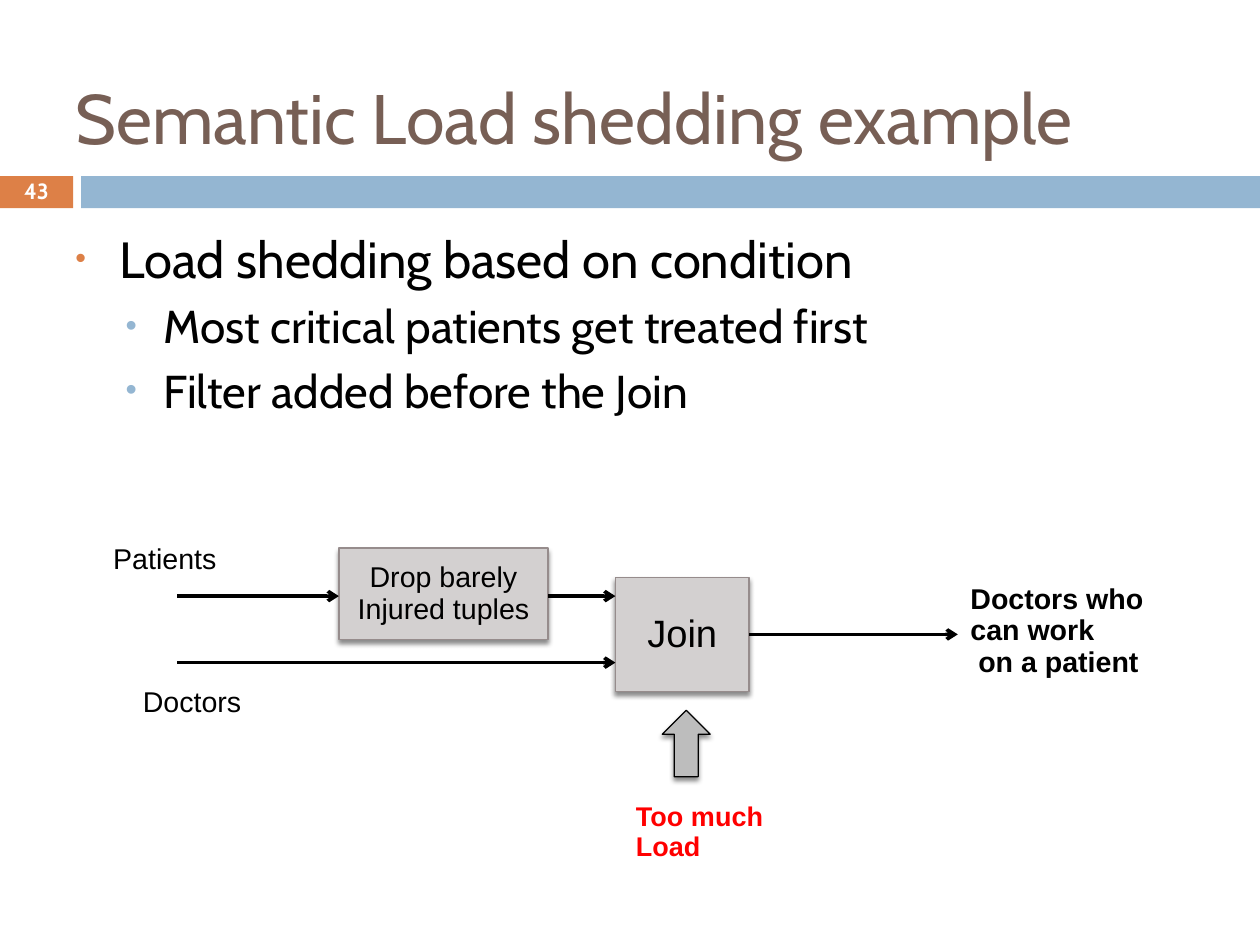
from lxml import etree
from pptx import Presentation
from pptx import util as u
from pptx.dml.color import RGBColor
from pptx.enum import shapes, text
from pptx.oxml.ns import qn

PAGE_WIDTH, PAGE_HEIGHT = 793.75, 595.25
BLACK, WHITE, ORANGE, BLUE = "000000", "FFFFFF", "DD8047", "94B6D2"
BROWN, RED, GREY, EDGE, ARROW_GREY = "775F55", "FF0000", "D3D0D0", "968C8C", "BDBDBD"
LEFT, CENTER = text.PP_ALIGN.LEFT, text.PP_ALIGN.CENTER
TOP, MIDDLE = text.MSO_ANCHOR.TOP, text.MSO_ANCHOR.MIDDLE


def color(value):
    return RGBColor.from_string(value)


def child(parent, tag, **attributes):
    return etree.SubElement(parent, qn(tag), attributes)


def write(shape, lines, size, font="Arial", fill=BLACK, bold=False, align=LEFT,
          anchor=TOP, wrap=True, spacing=0.93, margins=(7.92, 4.32)):
    frame = shape.text_frame
    frame.word_wrap = wrap
    frame.vertical_anchor = anchor
    frame.margin_left = frame.margin_right = u.Pt(margins[0])
    frame.margin_top = frame.margin_bottom = u.Pt(margins[1])
    for index, line in enumerate(lines):
        para = frame.paragraphs[0] if index == 0 else frame.add_paragraph()
        para.alignment = align
        para.line_spacing = spacing
        span = para.add_run()
        span.text = line
        span.font.size = u.Pt(size)
        span.font.name = font
        span.font.bold = bold
        span.font.color.rgb = color(fill)
    return frame.paragraphs


def add_text(page, box, lines, size, **style):
    return write(page.shapes.add_textbox(*map(u.Pt, box)), lines, size, **style)


def add_block(page, kind, box, fill, edge=None, shadow=False):
    block = page.shapes.add_shape(kind, *map(u.Pt, box))
    block.shadow.inherit = False
    block.fill.solid()
    block.fill.fore_color.rgb = color(fill)
    if edge:
        block.line.color.rgb = color(edge)
        block.line.width = u.Pt(0.79)
    else:
        block.line.fill.background()
    if shadow:
        effects = block.element.spPr.find(qn("a:effectLst"))
        outer = child(effects, "a:outerShdw", blurRad=str(u.Pt(3)), dist=str(u.Pt(2.4)),
                      dir="5400000", rotWithShape="0")
        child(child(outer, "a:srgbClr", val=BLACK), "a:alpha", val="45000")
    return block


def add_arrow(page, start, end, y):
    arrow = page.shapes.add_connector(
        shapes.MSO_CONNECTOR.STRAIGHT, *map(u.Pt, (start, y, end, y)))
    arrow.line.color.rgb = color(BLACK)
    arrow.line.width = u.Pt(2.25)
    properties = arrow.element.spPr
    child(properties.find(qn("a:ln")), "a:tailEnd", type="arrow")
    child(properties, "a:effectLst")


def add_bullet(para, level, before, left, hanging, fill, percent):
    para.level = level
    para.space_before = u.Pt(before)
    props = para._p.get_or_add_pPr()
    props.set("marL", str(u.Pt(left)))
    props.set("indent", str(u.Pt(-hanging)))
    child(child(props, "a:buClr"), "a:srgbClr", val=fill)
    child(props, "a:buSzPct", val=str(percent * 1000))
    child(props, "a:buFont", typeface="Arial")
    child(props, "a:buChar", char="•")


def draw_header(page, box):
    left, top, width, height = box
    band_height, number_width, gap = 20.2, 46.1, 5
    band_top = top + height - band_height
    band_left = left + number_width + gap
    rectangle = shapes.MSO_SHAPE.RECTANGLE
    add_block(page, rectangle, (left, band_top, number_width, band_height), ORANGE)
    add_block(page, rectangle, (band_left, band_top, left + width - band_left, band_height), BLUE)
    add_text(page, (left + 39.6, top + 23.8, 714.2, 99.4), ["Semantic Load shedding example"],
             44.1, font="Cabin", fill=BROWN, anchor=MIDDLE, spacing=1.0)
    add_text(page, (left, band_top - 1.2, number_width, band_height), ["43"], 13.9,
             font="Cabin", fill=WHITE, bold=True, align=CENTER, anchor=MIDDLE, spacing=1.0)


def draw_bullets(page, box):
    lines = ["Load shedding based on condition", "Most critical patients get treated first",
             "Filter added before the Join"]
    first, *rest = add_text(page, box, lines, 29, font="Cabin", spacing=1.0)
    first.runs[0].font.size = u.Pt(32)
    add_bullet(first, 0, 7.7, 27.8, 27.8, ORANGE, 60)
    for para in rest:
        add_bullet(para, 1, 5.8, 55.4, 23.8, BLUE, 70)


def draw_join_flow(page, box):
    left, top, width, height = box
    rectangle = shapes.MSO_SHAPE.RECTANGLE
    stream_left = left + 48.2
    filter_left, filter_width = left + 150.1, 131.8
    join_left, join_top, join_width, join_height = left + 324.3, top + 23.8, 84.2, 72
    result_left = left + 540

    blocks = [
        ((filter_left, top + 5.4, filter_width, 57.6), ["Drop barely", "Injured tuples"], 18),
        ((join_left, join_top, join_width, join_height), ["Join"], 24),
    ]
    for block_box, lines, size in blocks:
        block = add_block(page, rectangle, block_box, GREY, EDGE, shadow=True)
        write(block, lines, size, align=CENTER, anchor=MIDDLE, wrap=False)
    add_block(page, shapes.MSO_SHAPE.UP_ARROW, (left + 353.8, top + 107.6, 30.2, 41.8),
              ARROW_GREY, BLACK, shadow=True)

    add_arrow(page, stream_left, filter_left, top + 35.7)
    add_arrow(page, filter_left + filter_width, join_left, top + 35.7)
    add_arrow(page, stream_left, join_left, top + 77.6)
    add_arrow(page, join_left + join_width, result_left, join_top + join_height / 2)

    add_text(page, (left, top - 1.2, 81.4, 28), ["Patients"], 18, wrap=False)
    add_text(page, (left + 18.7, top + 88.8, 78.5, 28), ["Doctors"], 18, wrap=False)
    result = add_text(page, (result_left, top + 23.5, left + width - result_left, 69),
                      ["Doctors who can work", "on a patient"], 18, bold=True)
    result[1]._p.get_or_add_pPr().set("marL", str(u.Pt(5)))
    load_top = top + 161.8
    add_text(page, (left + 330.2, load_top, 108, top + height - load_top), ["Too much Load"],
             17, fill=RED, bold=True, margins=(7.2, 3.6))


def main():
    deck = Presentation()
    deck.slide_width, deck.slide_height = u.Pt(PAGE_WIDTH), u.Pt(PAGE_HEIGHT)
    page = deck.slides.add_slide(deck.slide_layouts[6])
    page.background.fill.solid()
    page.background.fill.fore_color.rgb = color(WHITE)
    draw_header(page, (0, 0, PAGE_WIDTH, 131.1))
    draw_bullets(page, (39.6, 139, 714.2, 404.6))
    draw_join_flow(page, (63.4, 339.8, 675.4, 207.4))
    deck.save("out.pptx")


if __name__ == "__main__":
    main()
